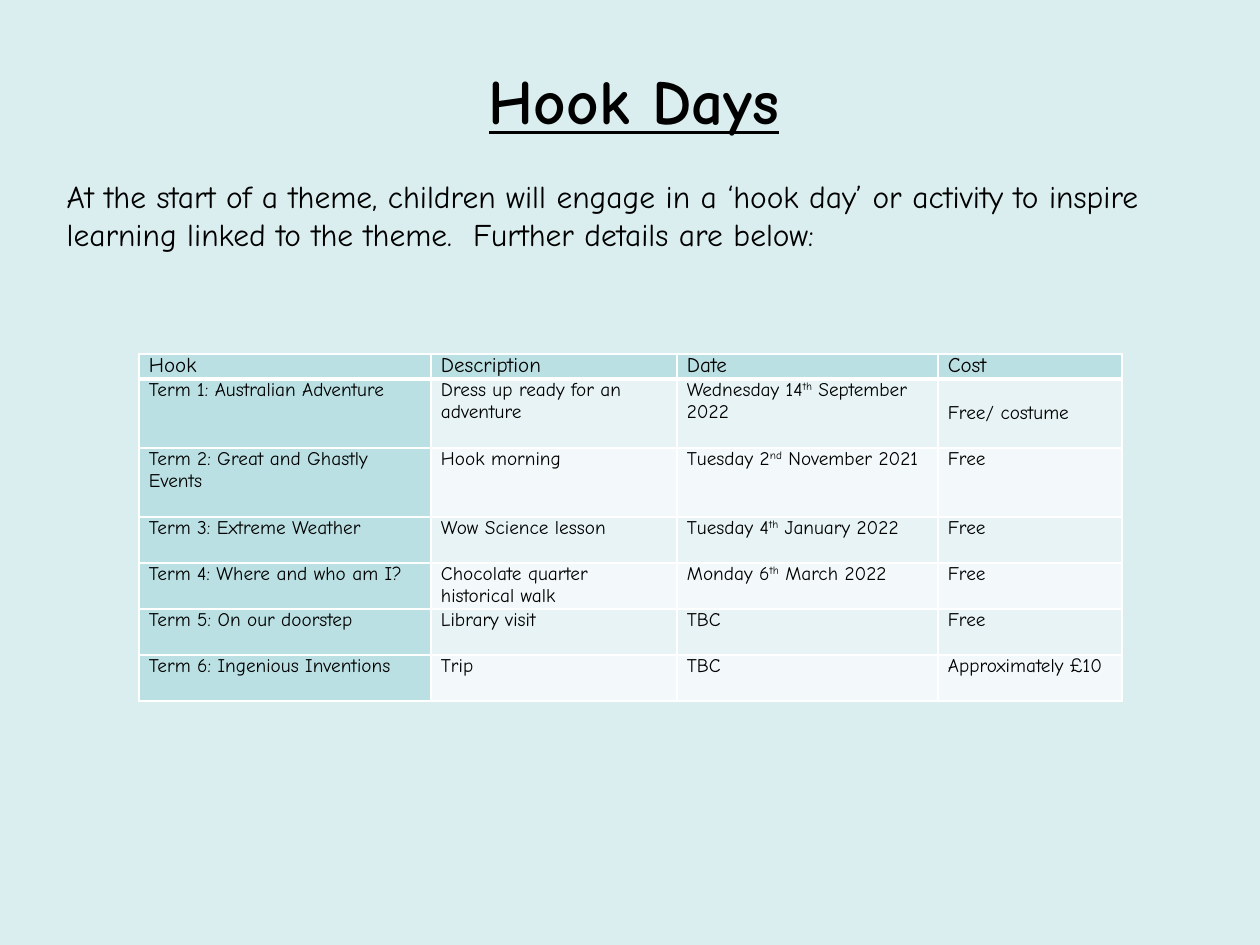
from lxml import etree
from pptx import Presentation
from pptx.dml.color import RGBColor
from pptx.enum.text import MSO_ANCHOR, PP_ALIGN
from pptx.oxml.ns import qn
from pptx.util import Pt

TOP, MIDDLE = MSO_ANCHOR.TOP, MSO_ANCHOR.MIDDLE
LEFT, CENTER = PP_ALIGN.LEFT, PP_ALIGN.CENTER
PX = 914400 // 126
FONT = "Comic Neue"
COLORS = {
    "background": "DAEDEF",
    "heading": "BBE0E3",
    "odd": "E7F3F4",
    "even": "F3F9FA",
    "border": "FFFFFF",
    "text": "000000",
}
COLUMN_WIDTHS = [292, 246, 261, 184]
ROW_HEIGHTS = [25, 69, 69, 46, 46, 46, 46]
# Text between carets is superscript.
ROWS = [
    ["Hook", "Description", "Date", "Cost"],
    ["Term 1: Australian Adventure", "Dress up ready for an adventure",
     "Wednesday 14^th^ September 2022", "Free/ costume"],
    ["Term 2: Great and Ghastly Events", "Hook morning",
     "Tuesday 2^nd^ November 2021", "Free"],
    ["Term 3: Extreme Weather", "Wow Science lesson",
     "Tuesday 4^th^ January 2022", "Free"],
    ["Term 4: Where and who am I?", "Chocolate quarter historical walk",
     "Monday 6^th^ March 2022", "Free"],
    ["Term 5: On our doorstep", "Library visit", "TBC", "Free"],
    ["Term 6: Ingenious Inventions", "Trip", "TBC", "Approximately £10"],
]


def write(para, text, size, **formats):
    for index, part in enumerate(text.split("^")):
        span = para.add_run()
        span.text = part
        span.font.color.rgb = RGBColor.from_string(COLORS["text"])
        for name, value in {"name": FONT, "size": Pt(size), **formats}.items():
            setattr(span.font, name, value)
        if index % 2:
            span._r.get_or_add_rPr().set("baseline", "30000")


def add_borders(cell, widths):
    """Draw the cell's edges; widths maps an edge letter to points."""
    properties = cell._tc.get_or_add_tcPr()
    for index, (edge, width) in enumerate(widths.items()):
        line = etree.Element(qn(f"a:ln{edge}"), w=str(Pt(width)))
        fill = etree.SubElement(line, qn("a:solidFill"))
        etree.SubElement(fill, qn("a:srgbClr"), val=COLORS["border"])
        properties.insert(index, line)


deck = Presentation()
deck.slide_width, deck.slide_height = 1260 * PX, 945 * PX
page = deck.slides.add_slide(deck.slide_layouts[1])
page.background.fill.solid()
page.background.fill.fore_color.rgb = RGBColor.from_string(COLORS["background"])

title, intro = page.placeholders
for box, top, height, align, text, size, formats in [
    (title, 55, 90, CENTER, "Hook Days", 36, {"bold": True, "underline": True}),
    (intro, 171, 164, LEFT,
     "At the start of a theme, children will engage in a ‘hook day’ or activity "
     "to inspire learning linked to the theme.  Further details are below:", 18, {}),
]:
    box.left, box.top, box.width, box.height = 54 * PX, top * PX, 1160 * PX, height * PX
    box.text_frame.vertical_anchor = TOP
    para = box.text_frame.paragraphs[0]
    para.alignment = align
    para.space_before = Pt(0)
    write(para, text, size, **formats)

intro_format = intro.text_frame.paragraphs[0]._p.get_or_add_pPr()
intro_format.set("marL", "0")
intro_format.set("indent", "0")
etree.SubElement(intro_format, qn("a:buNone"))

frame = page.shapes.add_table(
    len(ROWS), len(COLUMN_WIDTHS), 139 * PX, 354 * PX,
    sum(COLUMN_WIDTHS) * PX, sum(ROW_HEIGHTS) * PX)
hooks = frame.table
hooks.first_row = hooks.horz_banding = False
for column, width in zip(hooks.columns, COLUMN_WIDTHS):
    column.width = width * PX
for row, height in zip(hooks.rows, ROW_HEIGHTS):
    row.height = height * PX

for r, texts in enumerate(ROWS):
    for c, text in enumerate(texts):
        cell = hooks.cell(r, c)
        cell.margin_left = cell.margin_right = 10 * PX
        cell.margin_top = cell.margin_bottom = 0
        cell.vertical_anchor = MIDDLE if text == "Free/ costume" else TOP
        band = "heading" if r == 0 or c == 0 else "odd" if r % 2 else "even"
        cell.fill.solid()
        cell.fill.fore_color.rgb = RGBColor.from_string(COLORS[band])
        add_borders(cell, {"L": 1, "R": 1, "T": 3 if r == 1 else 1,
                           "B": 3 if r == 0 else 1})
        write(cell.text_frame.paragraphs[0], text, 12 if r == 0 else 11)

deck.save("out.pptx")
